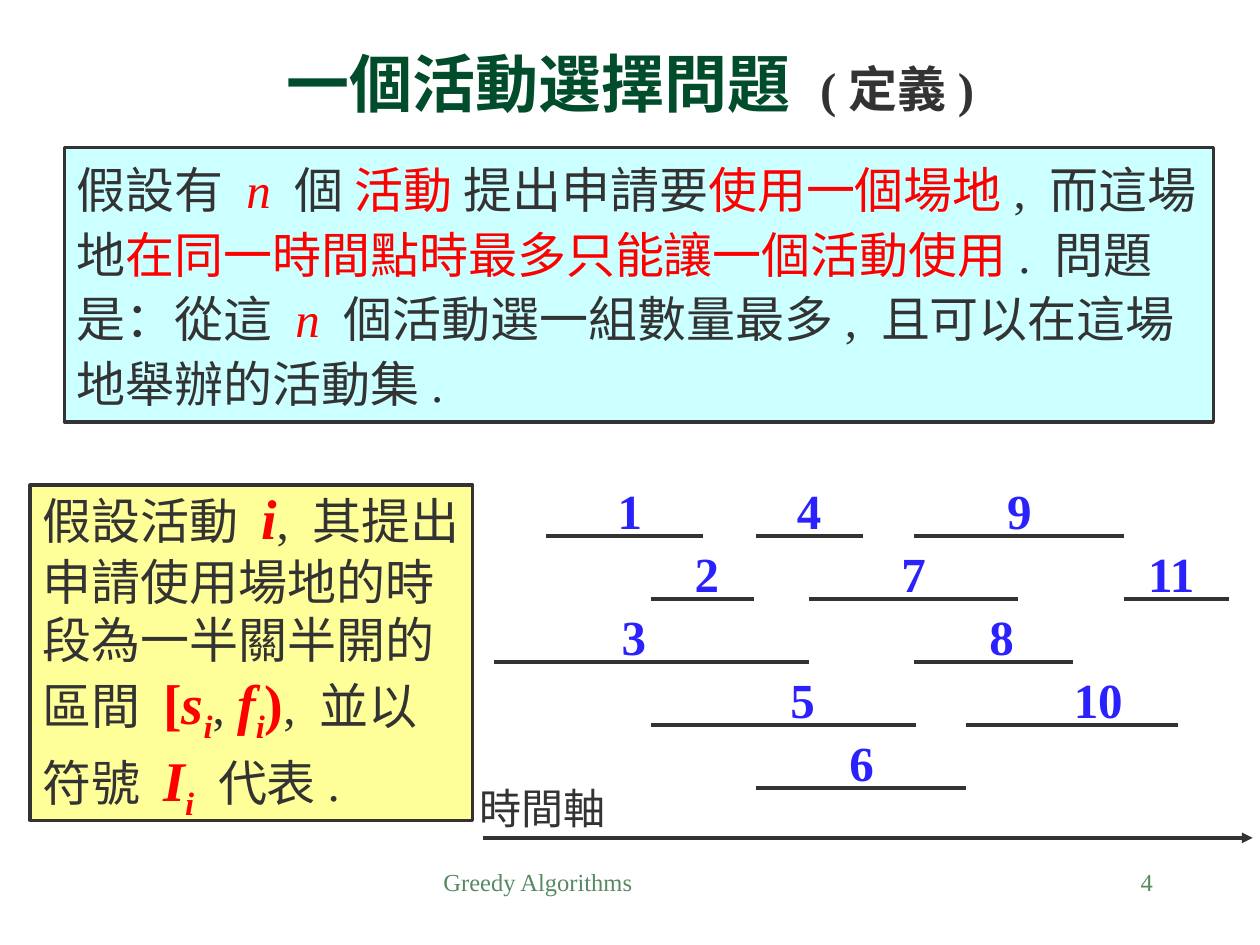
"""Build the activity selection problem slide with its activity timeline."""
import pptx
import pptx.dml.color
import pptx.enum.shapes
import pptx.enum.text
import pptx.oxml
import pptx.oxml.ns
import pptx.util

Cm, Pt = pptx.util.Cm, pptx.util.Pt
RGB = pptx.dml.color.RGBColor.from_string
ALIGN = pptx.enum.text.PP_ALIGN
ANCHOR = pptx.enum.text.MSO_ANCHOR
COLORS = {"ink": "333333", "red": "FF0000", "green": "004C2B", "footer": "578963",
          "blue": "2B21FD", "cyan": "CCFFFF", "yellow": "FFFF99"}


def write_runs(paragraph, runs):
    for text, size, color, style in runs:
        run = paragraph.add_run()
        run.text = text
        run.font.name = "Times New Roman"
        run.font.size = Pt(size)
        run.font.color.rgb = RGB(COLORS[color])
        run.font.bold = "b" in style
        run.font.italic = "i" in style
        if "_" in style:
            run.font._element.set("baseline", "-25000")


def add_line(shapes, left, right, y):
    line = shapes.add_connector(pptx.enum.shapes.MSO_CONNECTOR.STRAIGHT,
                                Cm(left), Cm(y), Cm(right), Cm(y))
    line.line.color.rgb = RGB(COLORS["ink"])
    line.line.width = Pt(2)
    line._element.spPr.append(pptx.oxml.parse_xml(
        f'<a:effectLst {pptx.oxml.ns.nsdecls("a")}/>'))
    return line


presentation = pptx.Presentation()
presentation.slide_width, presentation.slide_height = Cm(25.4), Cm(19.05)
slide = presentation.slides.add_slide(presentation.slide_layouts[5])

title = slide.shapes.title
title.left, title.top, title.width, title.height = Cm(1.7), Cm(1.07), Cm(22.02), Cm(1.47)
title.text_frame.vertical_anchor = ANCHOR.BOTTOM
title.text_frame.auto_size = pptx.enum.text.MSO_AUTO_SIZE.NONE
title_paragraph = title.text_frame.paragraphs[0]
title_paragraph.alignment = ALIGN.CENTER
write_runs(title_paragraph, [("一個活動選擇問題 ", 36, "green", "b"), ("(定義)", 28, "ink", "b")])

problem_runs = [
    ("假設有 ", 28, "ink", ""), ("n ", 28, "red", "i"), ("個 ", 28, "ink", ""),
    ("活動", 28, "red", ""), (" 提出申請要", 28, "ink", ""),
    ("使用一個場地", 28, "red", ""), (", 而這場地", 28, "ink", ""),
    ("在同一時間點時最多只能讓一個活動使用", 28, "red", ""),
    (". 問題是：從這 ", 28, "ink", ""), ("n ", 28, "red", "i"),
    ("個活動選一組數量最多, 且可以在這場地舉辦的活動集.", 28, "ink", ""),
]
interval_runs = [
    ("假設活動 ", 28, "ink", ""), ("i", 32, "red", "bi"),
    (", 其提出申請使用場地的時段為一半關半開的區間 ", 28, "ink", ""),
    ("[", 32, "red", "b"), ("s", 32, "red", "bi"), ("i", 32, "red", "bi_"),
    (", ", 28, "ink", ""), ("f", 32, "red", "bi"), ("i", 32, "red", "bi_"),
    (")", 32, "red", "b"), (", 並以符號 ", 28, "ink", ""),
    ("I", 32, "red", "bi"), ("i", 32, "red", "bi_"), (" 代表.", 28, "ink", ""),
]
boxes = [
    (1.3, 2.97, 23.16, 5.54, "cyan", ANCHOR.TOP, 1.1, problem_runs),
    (0.61, 9.78, 8.92, 6.76, "yellow", ANCHOR.MIDDLE, 1.0, interval_runs),
]
for left, top, width, height, fill, anchor, spacing, runs in boxes:
    box = slide.shapes.add_shape(pptx.enum.shapes.MSO_SHAPE.RECTANGLE,
                                 Cm(left), Cm(top), Cm(width), Cm(height))
    box.shadow.inherit = False
    box.fill.solid()
    box.fill.fore_color.rgb = RGB(COLORS[fill])
    box.line.color.rgb = RGB(COLORS["ink"])
    box.line.width = Pt(2)
    box.text_frame.word_wrap = True
    box.text_frame.vertical_anchor = anchor
    paragraph = box.text_frame.paragraphs[0]
    paragraph.alignment = ALIGN.LEFT
    paragraph.line_spacing = spacing
    write_runs(paragraph, runs)

first_row, row_step = 10.8, 1.27
activities = [
    ("1", 0, 11, 14.17, 12.7), ("2", 1, 13.13, 15.19, 14.25),
    ("3", 2, 9.96, 16.31, 12.78), ("4", 0, 15.24, 17.4, 16.31),
    ("5", 3, 13.13, 18.47, 16.18), ("6", 4, 15.24, 19.48, 17.37),
    ("7", 1, 16.31, 20.52, 18.42), ("8", 2, 18.42, 21.64, 20.19),
    ("9", 0, 18.42, 22.66, 20.55), ("10", 3, 19.48, 23.75, 22.14),
    ("11", 1, 22.66, 24.77, 23.61),
]
labels = [
    ("Greedy Algorithms", 8.69, 17.35, 8.05, 1.27, 14, "footer", "", ALIGN.LEFT, ANCHOR.TOP),
    ("4", 18.21, 17.35, 5.28, 1.27, 14, "footer", "", ALIGN.RIGHT, ANCHOR.TOP),
    ("時間軸", 9.42, 15.65, 3.05, 1.27, 24, "ink", "", ALIGN.CENTER, ANCHOR.MIDDLE),
]
for number, row, start, finish, center in activities:
    y = first_row + row * row_step
    add_line(slide.shapes, start, finish, y)
    width = 0.52 + 0.49 * len(number)
    labels.append((number, center - width / 2, y - 1.24, width, 1.45, 28, "blue", "b",
                   ALIGN.CENTER, ANCHOR.MIDDLE))

time_axis = add_line(slide.shapes, 9.73, 25.25, 16.89)
time_axis.line._get_or_add_ln().append(pptx.oxml.parse_xml(
    f'<a:tailEnd {pptx.oxml.ns.nsdecls("a")} type="triangle"/>'))

for text, left, top, width, height, size, color, style, alignment, anchor in labels:
    label = slide.shapes.add_textbox(Cm(left), Cm(top), Cm(width), Cm(height))
    label.text_frame.word_wrap = False
    label.text_frame.vertical_anchor = anchor
    paragraph = label.text_frame.paragraphs[0]
    paragraph.alignment = alignment
    write_runs(paragraph, [(text, size, color, style)])
    if color == "footer":
        label.text_frame.word_wrap = True
        paragraph.space_before = Pt(7)

presentation.save("out.pptx")
